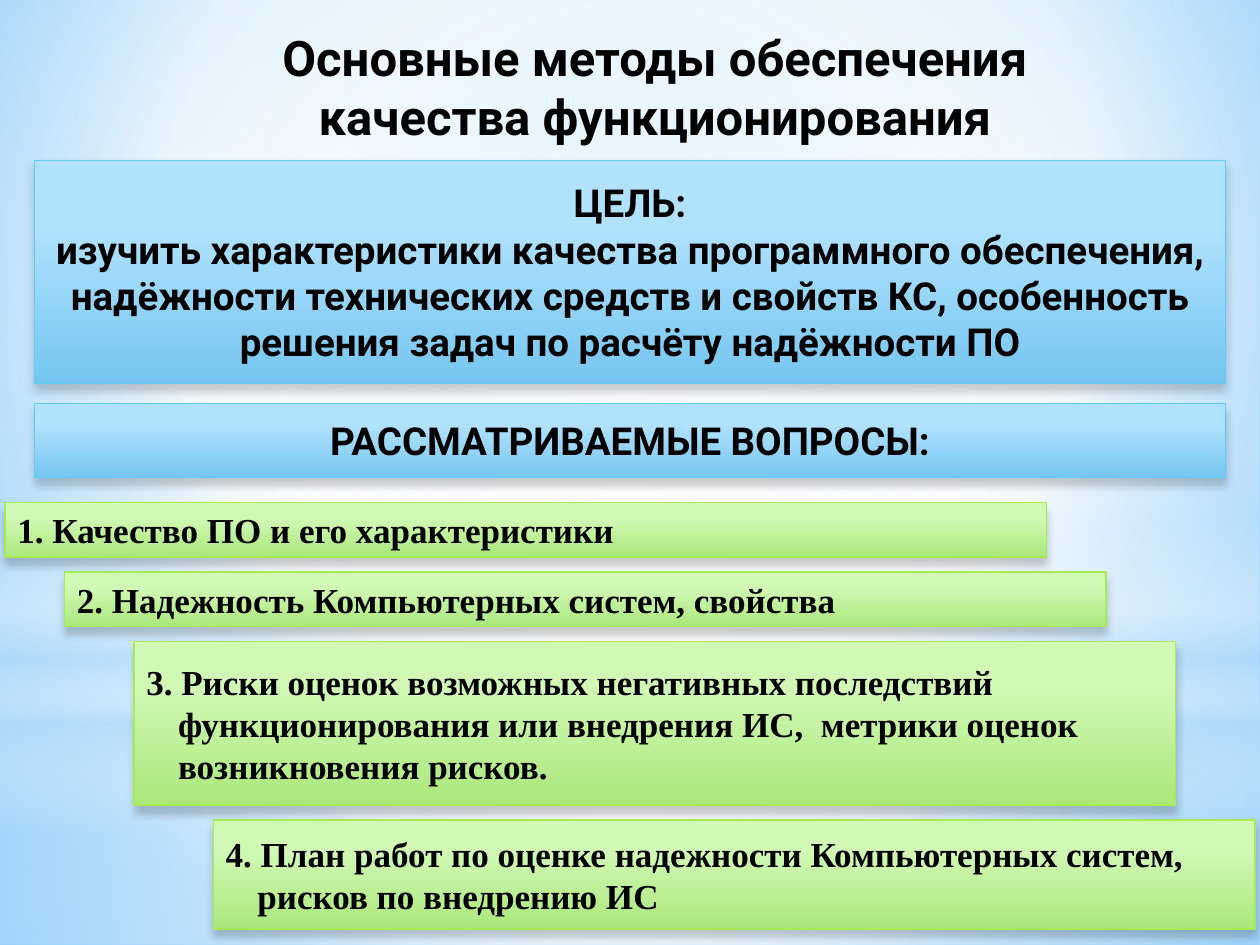
from lxml import etree
from pptx import Presentation
from pptx.dml.color import RGBColor
from pptx.enum.shapes import MSO_SHAPE
from pptx.enum.text import MSO_ANCHOR, PP_ALIGN
from pptx.oxml.ns import qn
from pptx.util import Cm, Pt

RECT, OVAL = MSO_SHAPE.RECTANGLE, MSO_SHAPE.OVAL
CENTER, LEFT = PP_ALIGN.CENTER, PP_ALIGN.LEFT
MIDDLE = MSO_ANCHOR.MIDDLE

W, H = 25.4, 19.05
HEAD_FONT, LIST_FONT = "Roboto", "Times New Roman"
BLUE = ("B1E2FD", "76C6F1", "5ECCF3")
GREEN = ("D1F8B5", "AAE87B", "A7EA52")
MID = (50, 50, 50, 50)

TITLE = ["Основные методы обеспечения", "качества функционирования"]
GOAL = [
    "ЦЕЛЬ:",
    "изучить характеристики качества программного обеспечения, надёжности "
    "технических средств и свойств КС, особенность решения задач по расчёту "
    "надёжности ПО",
]
QUESTIONS = ["РАССМАТРИВАЕМЫЕ ВОПРОСЫ:"]
ITEMS = [
    (0.1, 1.1, "1. Качество ПО и его характеристики"),
    (1.3, 1.1, "2. Надежность Компьютерных систем, свойства"),
    (2.7, 3.3, "3. Риски оценок возможных негативных последствий функционирования "
               "или внедрения ИС,  метрики оценок возникновения рисков."),
    (4.3, 2.2, "4. План работ по оценке надежности Компьютерных систем, "
               "рисков по внедрению ИС"),
]


def rgb(value):
    """Turn a hex string into a colour."""
    return RGBColor.from_string(value)


def add(parent, tag, **attrs):
    """Append a DrawingML child element with the given attributes."""
    return etree.SubElement(parent, qn(tag), {k: str(v) for k, v in attrs.items()})


def add_color(parent, value, opacity):
    """Append a hex colour with an opacity in percent."""
    clr = add(parent, "a:srgbClr", val=value)
    if opacity < 100:
        add(clr, "a:alpha", val=opacity * 1000)


def set_gradient(fill, element, stops, focus=None):
    """Fill with (position, colour, opacity) stops, radial if a focus is given."""
    fill.gradient()
    grad = element.find(".//" + qn("a:gradFill"))
    for child in list(grad):
        grad.remove(child)
    gs_lst = add(grad, "a:gsLst")
    for pos, value, opacity in stops:
        add_color(add(gs_lst, "a:gs", pos=pos * 1000), value, opacity)
    if focus:
        sides = {k: v * 1000 for k, v in zip("ltrb", focus)}
        add(add(grad, "a:path", path="circle"), "a:fillToRect", **sides)
    else:
        add(grad, "a:lin", ang=5400000, scaled=0)


def add_glow(slide, kind, top, height, stops, focus=None):
    """Add a full-width translucent backdrop shape."""
    s = slide.shapes.add_shape(kind, 0, Cm(top), Cm(W), Cm(height))
    s.shadow.inherit = False
    s.line.fill.background()
    set_gradient(s.fill, s._element, stops, focus)


def write(tf, lines, font, size, align=CENTER, hang=0):
    """Write bold black paragraphs with an optional hanging indent."""
    tf.word_wrap = True
    for i, line in enumerate(lines):
        p = tf.paragraphs[0] if i == 0 else tf.add_paragraph()
        p.text = line
        p.alignment = align
        p.font.name, p.font.size, p.font.bold = font, Pt(size), True
        p.font.color.rgb = rgb("000000")
        if hang:
            pPr = p._p.get_or_add_pPr()
            pPr.set("marL", str(Cm(hang)))
            pPr.set("indent", str(-Cm(hang)))


def add_panel(slide, left, top, width, height, colors):
    """Add a shaded box with a soft shadow and return its text frame."""
    light, dark, edge = colors
    s = slide.shapes.add_shape(RECT, Cm(left), Cm(top), Cm(width), Cm(height))
    set_gradient(s.fill, s._element, [(28, light, 100), (100, dark, 100)])
    s.line.color.rgb = rgb(edge)
    s.line.width = Pt(0.75)
    s.shadow.inherit = False
    effects = s._element.spPr.find(qn("a:effectLst"))
    shadow = add(effects, "a:outerShdw", blurRad=Pt(5), dist=Pt(4),
                 dir=5400000, rotWithShape=0)
    add_color(shadow, "000000", 20)
    s.text_frame.vertical_anchor = MIDDLE
    return s.text_frame


def add_backdrop(slide):
    """Paint the background and its layers of light."""
    set_gradient(slide.background.fill, slide._element,
                 [(0, "9ED5FF", 100), (60, "FFFFFF", 100), (100, "5BB9FF", 100)],
                 (20, 10, 20, 60))
    add_glow(slide, RECT, 14.17, H - 14.17,
             [(0, "FFFFFF", 91), (37, "FFFFFF", 76), (100, "B4DCFA", 79)], MID)
    add_glow(slide, RECT, 0, 14.17,
             [(0, "FFFFFF", 89), (48, "FFFFFF", 62), (100, "B4DCFA", 79)], MID)
    add_glow(slide, RECT, 10.46, 6.35,
             [(0, "FFFFFF", 0), (29, "FFFFFF", 30), (45, "B4DCFA", 40),
              (55, "FFFFFF", 26), (65, "B4DCFA", 60), (100, "FFFFFF", 0)])
    add_glow(slide, OVAL, 4.45, 14.17,
             [(0, "FFFFFF", 100), (56, "FFFFFF", 0)], MID)


def add_items(slide, top, gap):
    """Stack the numbered questions as steps."""
    for i, (left, height, text) in enumerate(ITEMS):
        tf = add_panel(slide, left, top, 21, height, GREEN)
        write(tf, [text], LIST_FONT, 20, LEFT, 0.64 if i else 0)
        top += height + gap


def main():
    """Build and save the slide."""
    prs = Presentation()
    prs.slide_width, prs.slide_height = Cm(W), Cm(H)
    slide = prs.slides.add_slide(prs.slide_layouts[6])
    add_backdrop(slide)
    title = slide.shapes.add_textbox(Cm(1.7), Cm(0.43), Cm(23), Cm(2.64))
    write(title.text_frame, TITLE, HEAD_FONT, 28)
    write(add_panel(slide, 0.7, 3.23, 24, 4.5, BLUE), GOAL, HEAD_FONT, 22)
    write(add_panel(slide, 0.7, 8.13, 24, 1.5, BLUE), QUESTIONS, HEAD_FONT, 22)
    add_items(slide, 10.13, 0.3)
    prs.save("out.pptx")


if __name__ == "__main__":
    main()
